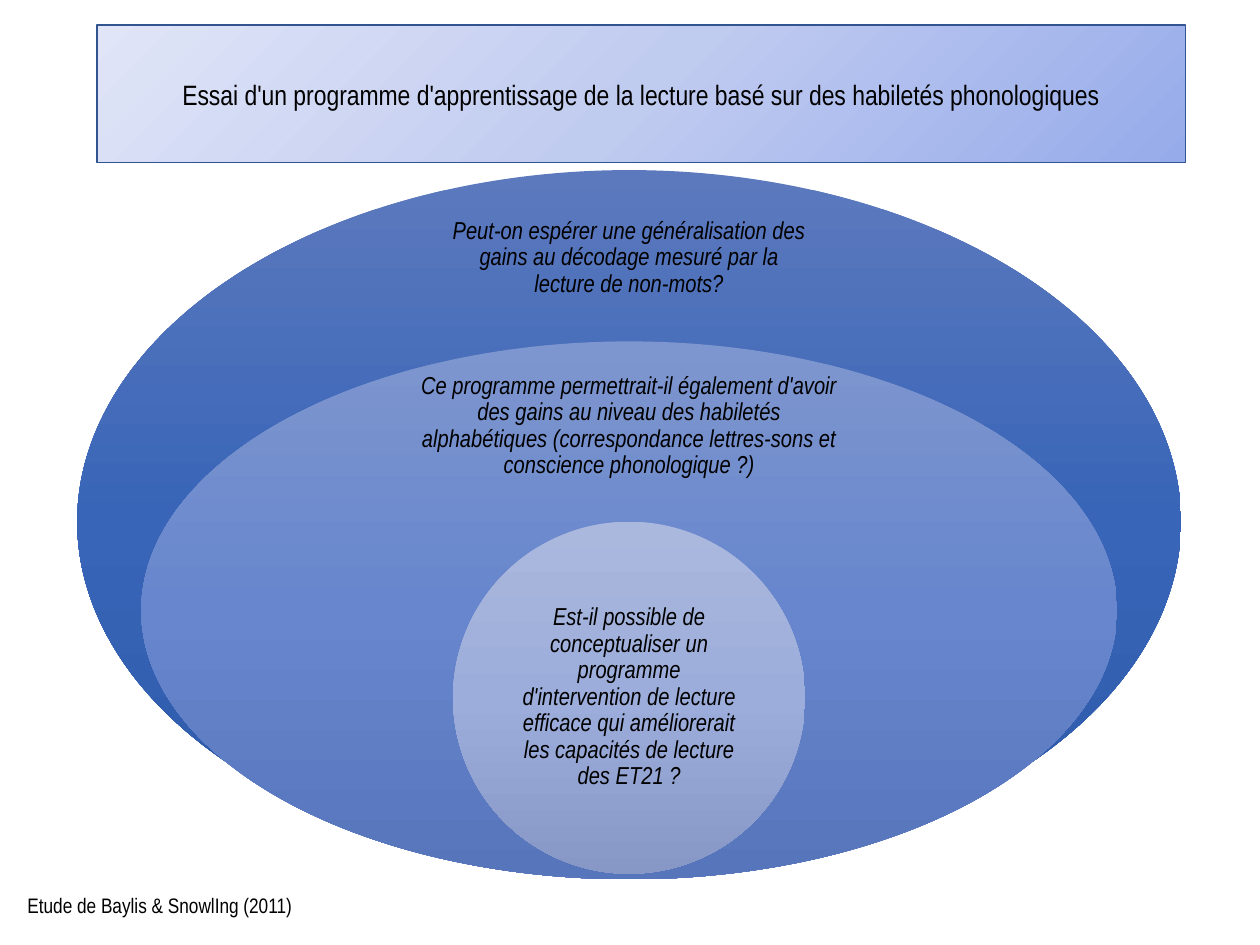
from pptx import Presentation, util as u
from pptx.dml.color import RGBColor
from pptx.enum import shapes, text
from pptx.oxml import parse_xml
from pptx.oxml.ns import nsdecls

FONT = "Arial Narrow"
CENTER_X = 359.5

# Oval: top, width, height, gradient; its label: top, width, height, words
OVALS = [
    (97.2, 630.7, 401.8, ("5C79BD", "3865B8", "2D59A8"), 125.3, 204.5, 43.9,
     "Peut-on espérer une généralisation des gains au décodage mesuré par la "
     "lecture de non-mots?"),
    (195.1, 557.6, 307.4, ("7E96CF", "6786CD", "5775BB"), 222.5, 243.4, 41.8,
     "Ce programme permettrait-il également d'avoir des gains au niveau des "
     "habiletés alphabétiques (correspondance lettres-sons et conscience "
     "phonologique ?)"),
    (298.1, 201.2, 201.2, ("ABB8DD", "9CADDB", "8798C6"), 356.4, 126.4, 84.2,
     "Est-il possible de conceptualiser un programme d'intervention de lecture "
     "efficace qui améliorerait les capacités de lecture des ET21 ?"),
]


def color(hex_string):
    return RGBColor.from_string(hex_string)


def fill_gradient(shape, colors, angle):
    """Spread three colours evenly; the angle runs clockwise."""
    stops = "".join(
        f'<a:gs pos="{index * 50000}"><a:srgbClr val="{value}"/></a:gs>'
        for index, value in enumerate(colors))
    shape.element.spPr.append(parse_xml(
        f'<a:gradFill rotWithShape="1" {nsdecls("a")}><a:gsLst>{stops}</a:gsLst>'
        f'<a:lin ang="{angle * 60000}" scaled="0"/></a:gradFill>'))


def write(shape, words, size, align, italic=False, spacing=1.0):
    paragraph = shape.text_frame.paragraphs[0]
    paragraph.text = words
    paragraph.alignment = align
    paragraph.line_spacing = spacing
    font = paragraph.font
    font.name, font.size, font.italic = FONT, u.Pt(size), italic
    font.color.rgb = color("000000")


def add_title(slide):
    title = slide.shapes.title
    title.left, title.top = u.Pt(55.4), u.Pt(14.4)
    title.width, title.height = u.Pt(622.1), u.Pt(78.5)
    title.element.spPr.append(parse_xml(
        f'<a:prstGeom prst="downArrowCallout" {nsdecls("a")}><a:avLst/></a:prstGeom>'))
    fill_gradient(title, ("96ABEA", "C0CBF0", "E0E5F7"), 225)
    title.line.color.rgb = color("325491")
    title.line.width = u.Pt(1)
    title.text_frame.auto_size = text.MSO_AUTO_SIZE.NONE
    title.text_frame.vertical_anchor = text.MSO_ANCHOR.MIDDLE
    write(title, "Essai d'un programme d'apprentissage de la lecture basé sur des "
          "habiletés phonologiques", 16, text.PP_ALIGN.CENTER)


def add_oval(slide, top, width, height, colors):
    oval = slide.shapes.add_shape(
        shapes.MSO_SHAPE.OVAL, u.Pt(CENTER_X - width / 2), u.Pt(top),
        u.Pt(width), u.Pt(height))
    oval.shadow.inherit = False
    fill_gradient(oval, colors, 90)
    oval.line.fill.background()


def add_label(slide, top, width, height, words):
    label = slide.shapes.add_textbox(
        u.Pt(CENTER_X - width / 2), u.Pt(top), u.Pt(width), u.Pt(height))
    frame = label.text_frame
    frame.word_wrap = True
    frame.vertical_anchor = text.MSO_ANCHOR.MIDDLE
    frame.margin_left = frame.margin_right = 0
    frame.margin_top = frame.margin_bottom = 0
    write(label, words, 14, text.PP_ALIGN.CENTER, italic=True, spacing=0.9)


def add_source(slide):
    source = slide.shapes.add_textbox(u.Pt(8.6), u.Pt(506.2), u.Pt(167.8), u.Pt(21.6))
    source.text_frame.word_wrap = False
    write(source, "Etude de Baylis & SnowlIng (2011)", 12, text.PP_ALIGN.LEFT)


def main():
    presentation = Presentation()
    presentation.slide_width, presentation.slide_height = u.Pt(720), u.Pt(540)
    slide = presentation.slides.add_slide(presentation.slide_layouts[5])
    add_title(slide)
    add_source(slide)
    # Nested questions, from the widest to the narrowest
    for top, width, height, colors, *label in OVALS:
        add_oval(slide, top, width, height, colors)
        add_label(slide, *label)
    presentation.save("out.pptx")


if __name__ == "__main__":
    main()
